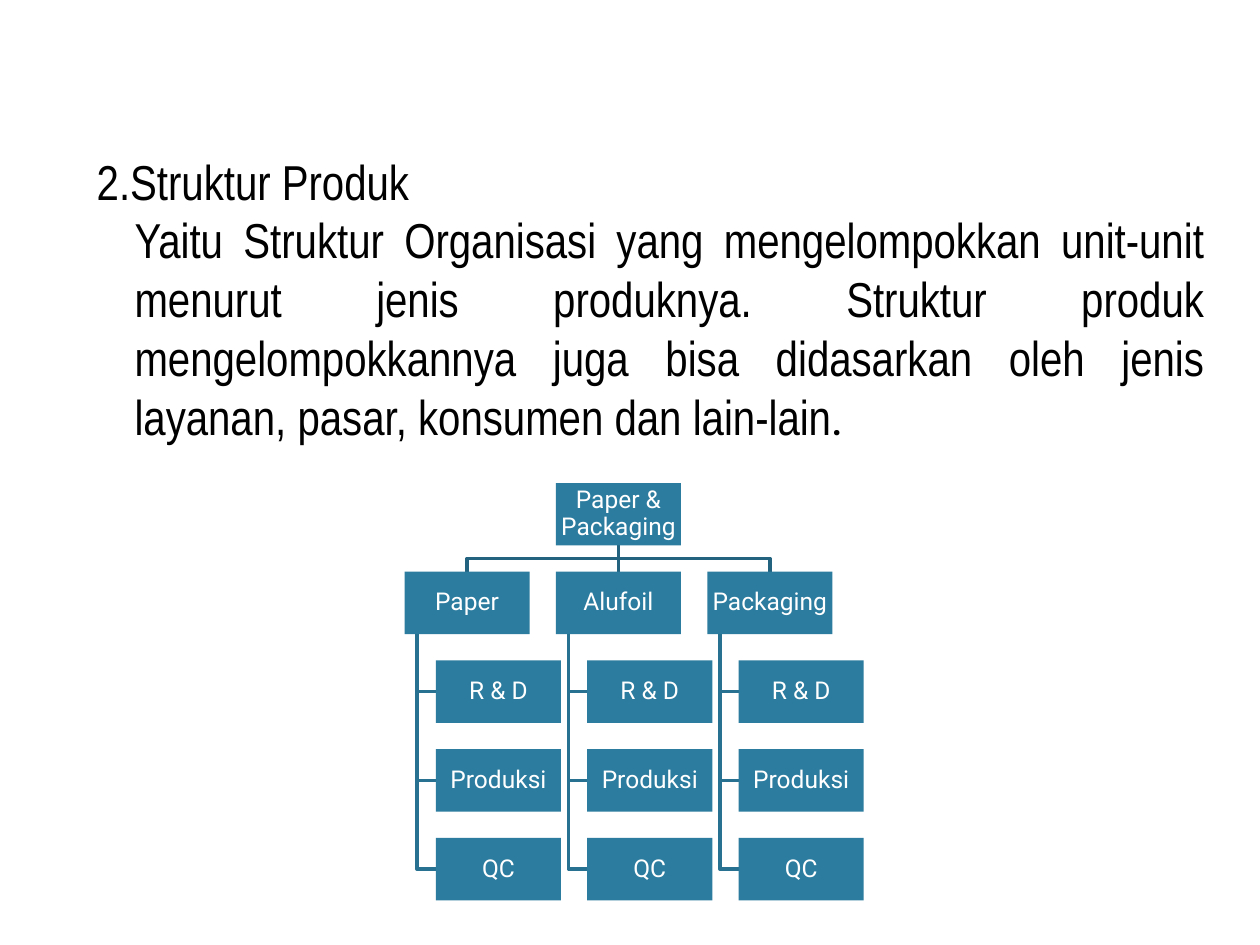
"""Builds a slide on product structure with its organisation chart."""
from pptx import Presentation
from pptx.dml.color import RGBColor
from pptx.enum.shapes import MSO_CONNECTOR, MSO_SHAPE
from pptx.enum.text import MSO_ANCHOR, MSO_AUTO_SIZE, PP_ALIGN
from pptx.oxml.ns import qn
from pptx.util import Pt
from lxml import etree

RECT, STRAIGHT = MSO_SHAPE.RECTANGLE, MSO_CONNECTOR.STRAIGHT
MIDDLE, GROW = MSO_ANCHOR.MIDDLE, MSO_AUTO_SIZE.SHAPE_TO_FIT_TEXT
LEFT, CENTER, JUSTIFY = PP_ALIGN.LEFT, PP_ALIGN.CENTER, PP_ALIGN.JUSTIFY

BLACK = RGBColor(0x00, 0x00, 0x00)
WHITE = RGBColor(0xFF, 0xFF, 0xFF)
BOX_FILL = RGBColor(0x2C, 0x7C, 0x9F)
BRANCH_LINE = RGBColor(0x23, 0x63, 0x7F)
UNIT_LINE = RGBColor(0x28, 0x71, 0x90)

BODY_FONT, CHART_FONT = "Arial Narrow", "Roboto"
BODY_SIZE, CHART_SIZE, LINE_WIDTH = 28, 14, 2

CHART_X, CHART_Y = 231.2, 276
BOX_W, BOX_H = 71.5, 35.7
COL_STEP, ROW_STEP = 86.5, 50.7
UNIT_INDENT, TRUNK_INSET = 17.9, BOX_W / 10

BODY = [
    (LEFT, 0, [("2.Struktur Produk", BODY_FONT)]),
    (JUSTIFY, 21.6, [
        ("Yaitu Struktur Organisasi yang mengelompokkan unit-unit menurut jenis "
         "produknya. Struktur produk mengelompokkannya juga bisa didasarkan oleh "
         "jenis layanan, pasar, konsumen dan lain-lain", BODY_FONT),
        (".", CHART_FONT)]),
]
ROOT = "Paper & Packaging"
DIVISIONS = ["Paper", "Alufoil", "Packaging"]
UNITS = ["R & D", "Produksi", "QC"]


class SlideBuilder:
    """Holds the style and the current slide."""

    def __init__(self, slide):
        self.shapes = slide.shapes

    def run(self, p, text, font, size, color):
        """Adds one formatted run to a paragraph."""
        r = p.add_run()
        r.text = text
        r.font.name = font
        r.font.size = Pt(size)
        r.font.color.rgb = color

    def body(self, x, y, w, h, paragraphs):
        """Adds the explanatory text."""
        tf = self.shapes.add_textbox(Pt(x), Pt(y), Pt(w), Pt(h)).text_frame
        tf.word_wrap = True
        tf.auto_size = GROW
        for i, (align, indent, runs) in enumerate(paragraphs):
            p = tf.add_paragraph() if i else tf.paragraphs[0]
            p.alignment = align
            if indent:
                p._p.get_or_add_pPr().set("marL", str(Pt(indent)))
            for text, font in runs:
                self.run(p, text, font, BODY_SIZE, BLACK)

    def box(self, x, y, text):
        """Adds one box of the chart."""
        sp = self.shapes.add_shape(RECT, Pt(x), Pt(y), Pt(BOX_W), Pt(BOX_H))
        sp.shadow.inherit = False
        sp.fill.solid()
        sp.fill.fore_color.rgb = BOX_FILL
        sp.line.fill.background()
        tf = sp.text_frame
        tf.word_wrap = True
        tf.vertical_anchor = MIDDLE
        tf.margin_left = tf.margin_right = tf.margin_top = tf.margin_bottom = Pt(0.7)
        p = tf.paragraphs[0]
        p.alignment = CENTER
        p.line_spacing = 0.9
        self.run(p, text, CHART_FONT, CHART_SIZE, WHITE)

    def line(self, x1, y1, x2, y2, color):
        """Adds a straight line."""
        cn = self.shapes.add_connector(STRAIGHT, Pt(x1), Pt(y1), Pt(x2), Pt(y2))
        etree.SubElement(cn._element.spPr, qn("a:effectLst"))
        cn.line.color.rgb = color
        cn.line.width = Pt(LINE_WIDTH)

    def polyline(self, points, color):
        """Adds an open bent line."""
        start, *rest = [(Pt(x), Pt(y)) for x, y in points]
        fb = self.shapes.build_freeform(*start)
        fb.add_line_segments(rest, close=False)
        sp = fb.convert_to_shape()
        sp.shadow.inherit = False
        sp.fill.background()
        sp.line.color.rgb = color
        sp.line.width = Pt(LINE_WIDTH)


def draw_chart(sb):
    """Draws the lines, then the boxes over them."""
    columns = [CHART_X + i * COL_STEP for i in range(len(DIVISIONS))]
    division_y = CHART_Y + ROW_STEP
    unit_rows = [division_y + (i + 1) * ROW_STEP for i in range(len(UNITS))]
    root_x = columns[len(columns) // 2]
    root_mid, root_bottom = root_x + BOX_W / 2, CHART_Y + BOX_H
    bus_y = (root_bottom + division_y) / 2

    for x in columns:
        mid = x + BOX_W / 2
        if x == root_x:
            sb.line(mid, root_bottom, mid, division_y, BRANCH_LINE)
        else:
            sb.polyline([(root_mid, root_bottom), (root_mid, bus_y),
                         (mid, bus_y), (mid, division_y)], BRANCH_LINE)
        trunk = x + TRUNK_INSET
        for y in unit_rows:
            unit_mid = y + BOX_H / 2
            sb.polyline([(trunk, division_y + BOX_H), (trunk, unit_mid),
                         (x + UNIT_INDENT, unit_mid)], UNIT_LINE)

    sb.box(root_x, CHART_Y, ROOT)
    for x, division in zip(columns, DIVISIONS):
        sb.box(x, division_y, division)
        for y, unit in zip(unit_rows, UNITS):
            sb.box(x + UNIT_INDENT, y, unit)


def main():
    """Builds and saves the presentation."""
    prs = Presentation()
    prs.slide_width, prs.slide_height = Pt(720), Pt(540)
    sb = SlideBuilder(prs.slides.add_slide(prs.slide_layouts[6]))
    sb.body(48.2, 82.8, 646.6, 177.1, BODY)
    draw_chart(sb)
    prs.save("out.pptx")


if __name__ == "__main__":
    main()
